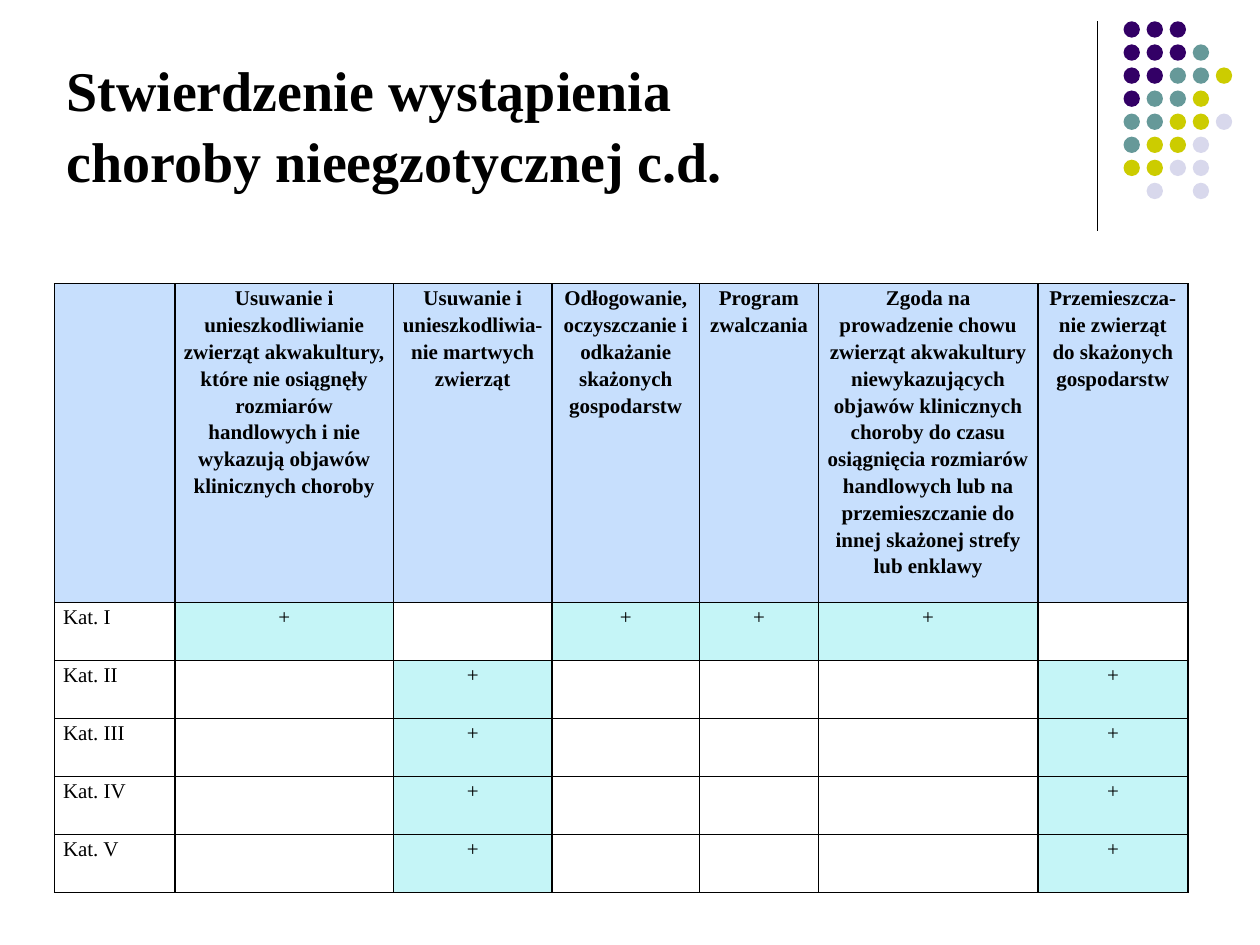
from dataclasses import dataclass

from lxml import etree
from pptx import Presentation
from pptx.dml.color import RGBColor
from pptx.enum.shapes import MSO_CONNECTOR, MSO_SHAPE
from pptx.enum.text import MSO_ANCHOR, PP_ALIGN
from pptx.oxml import parse_xml
from pptx.oxml.ns import nsdecls, qn
from pptx.util import Cm, Pt

LEFT, MID = PP_ALIGN.LEFT, PP_ALIGN.CENTER
TOP = MSO_ANCHOR.TOP
OVAL = MSO_SHAPE.OVAL
LINE = MSO_CONNECTOR.STRAIGHT


@dataclass(frozen=True)
class Theme:
    font: str = "Times New Roman"
    ink: str = "000000"
    head: str = "C7DFFD"
    mark: str = "C5F5F7"
    plum: str = "330066"
    teal: str = "669999"
    lime: str = "CCCC00"
    pale: str = "D8D8EC"
    title: int = 32
    body: int = 12


THEME = Theme()

# Each letter is a dot colour, a space is a gap
DOTS = ["PPP", "PPPT", "PPTTL", "PTTL", "TTLLG", "TLLG", "LLGG", " G G"]
TINTS = {"P": THEME.plum, "T": THEME.teal, "L": THEME.lime, "G": THEME.pale}

HEADS = [
    "",
    "Usuwanie i unieszkodliwianie zwierząt akwakultury, które nie osiągnęły "
    "rozmiarów handlowych i nie wykazują objawów klinicznych choroby",
    "Usuwanie i unieszkodliwia- nie martwych zwierząt",
    "Odłogowanie, oczyszczanie i odkażanie skażonych gospodarstw",
    "Program zwalczania",
    "Zgoda na prowadzenie chowu zwierząt akwakultury niewykazujących objawów "
    "klinicznych choroby do czasu osiągnięcia rozmiarów handlowych lub na "
    "przemieszczanie do innej skażonej strefy lub enklawy",
    "Przemieszcza-nie zwierząt do skażonych gospodarstw",
]
FIRST, OTHER = {1, 3, 4, 5}, {2, 6}
MARKS = {"I": FIRST, "II": OTHER, "III": OTHER, "IV": OTHER, "V": OTHER}
COLS = [2.43, 4.4, 3.2, 2.97, 2.4, 4.42, 3.03]
ROWS = [6.42] + [1.17] * len(MARKS)


def write(frame, text, size=THEME.body, bold=False, align=LEFT, space=1.15):
    """Put one formatted paragraph into a text frame."""
    para = frame.paragraphs[0]
    para.alignment, para.line_spacing = align, space
    para.font.size = Pt(size)
    if text:
        run = para.add_run()
        run.text = text
        run.font.name, run.font.size, run.font.bold = THEME.font, Pt(size), bold
        run.font.color.rgb = RGBColor.from_string(THEME.ink)


class Deck:
    def __init__(self, slide, theme):
        self.slide, self.theme = slide, theme

    def title(self, text, x, y, w, h):
        frame = self.slide.shapes.add_textbox(Cm(x), Cm(y), Cm(w), Cm(h)).text_frame
        frame.word_wrap, frame.vertical_anchor = True, TOP
        write(frame, text, size=self.theme.title, bold=True, space=1.06)

    def rule(self, x, top, end):
        line = self.slide.shapes.add_connector(LINE, Cm(x), Cm(top), Cm(x), Cm(end))
        line.line.color.rgb = RGBColor.from_string(self.theme.ink)
        line.line.width = Pt(0.75)
        etree.SubElement(line._element.spPr, qn("a:effectLst"))

    def dot(self, x, y, size, tint):
        dot = self.slide.shapes.add_shape(OVAL, Cm(x), Cm(y), Cm(size), Cm(size))
        dot.shadow.inherit = False
        dot.fill.solid()
        dot.fill.fore_color.rgb = RGBColor.from_string(tint)
        dot.line.fill.background()

    def cell(self, cell, text, fill=None, **form):
        cell.margin_left = cell.margin_right = Cm(0.17)
        cell.margin_top = cell.margin_bottom = 0
        cell.vertical_anchor = TOP
        write(cell.text_frame, text, **form)
        if fill:
            cell.fill.solid()
            cell.fill.fore_color.rgb = RGBColor.from_string(fill)
        else:
            cell.fill.background()
        props = cell._tc.get_or_add_tcPr()
        for i, side in enumerate("LRTB"):
            props.insert(i, parse_xml(
                f'<a:ln{side} {nsdecls("a")} w="{Pt(1)}"><a:solidFill>'
                f'<a:srgbClr val="{self.theme.ink}"/></a:solidFill></a:ln{side}>'))

    def table(self, x, y):
        grid = self.slide.shapes.add_table(
            len(ROWS), len(COLS), Cm(x), Cm(y), Cm(sum(COLS)), Cm(sum(ROWS))).table
        grid.first_row = grid.horz_banding = False
        for col, width in zip(grid.columns, COLS):
            col.width = Cm(width)
        for row, height in zip(grid.rows, ROWS):
            row.height = Cm(height)
        for c, text in enumerate(HEADS):
            self.cell(grid.cell(0, c), text, self.theme.head, bold=True, align=MID)
        for r, (name, marks) in enumerate(MARKS.items(), 1):
            self.cell(grid.cell(r, 0), f"Kat. {name}")
            for c in range(1, len(COLS)):
                text, fill = ("+", self.theme.mark) if c in marks else ("", None)
                self.cell(grid.cell(r, c), text, fill, align=MID)


def main():
    prs = Presentation()
    prs.slide_width, prs.slide_height = Cm(25.4), Cm(19.05)
    deck = Deck(prs.slides.add_slide(prs.slide_layouts[6]), THEME)

    # Corner ornament: rule and dot grid
    deck.rule(22.12, 0.43, 4.65)
    step = 1.86 / 4
    for r, row in enumerate(DOTS):
        for c, key in enumerate(row):
            if key in TINTS:
                deck.dot(22.65 + c * step, 0.43 + r * step, 0.33, TINTS[key])

    # Title and table
    deck.title("Stwierdzenie wystąpienia choroby nieegzotycznej c.d.",
               1.09, 0.91, 15.01, 3)
    deck.table(1.1, 5.72)
    prs.save("out.pptx")


if __name__ == "__main__":
    main()
